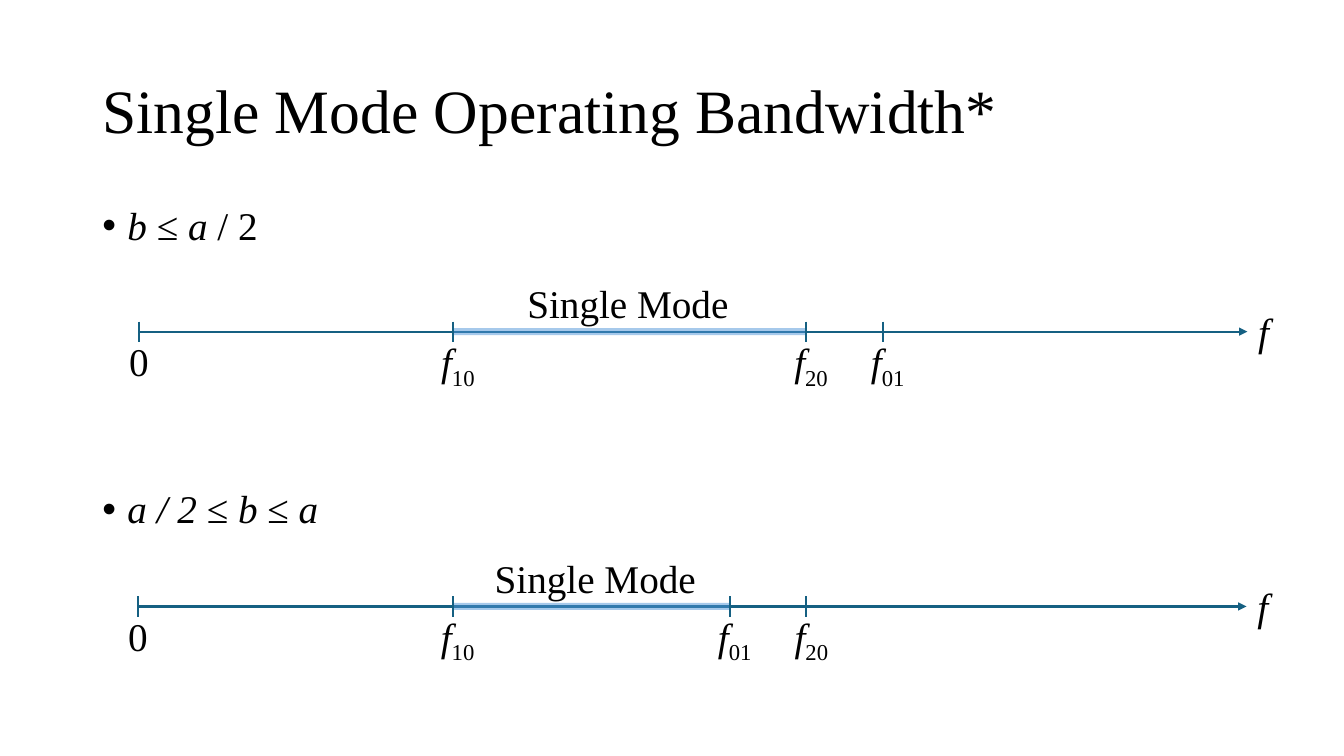
import pptx
import pptx.dml.color
import pptx.enum.shapes
import pptx.enum.text
import pptx.oxml.ns
import pptx.util
from lxml import etree

Pt = pptx.util.Pt
qn = pptx.oxml.ns.qn
FONT = "Times New Roman"
COLORS = {"ink": "000000", "axis": "156082", "band": "4E95D9"}


def color(name):
    return pptx.dml.color.RGBColor.from_string(COLORS[name])


def add_runs(paragraph, pieces, size):
    for words, italic, is_subscript in pieces:
        run = paragraph.add_run()
        run.text = words
        run.font.name = FONT
        run.font.size = Pt(size)
        run.font.italic = italic
        run.font.color.rgb = color("ink")
        if is_subscript:
            run.font._element.set("baseline", "-25000")


def add_text(slide, box, pieces, size=28, wrap=False):
    frame = slide.shapes.add_textbox(*map(Pt, box)).text_frame
    frame.word_wrap = wrap
    add_runs(frame.paragraphs[0], pieces, size)
    return frame


def add_line(slide, x1, y1, x2, y2, name="axis", width=1.5, alpha=None, arrow=False):
    line = slide.shapes.add_connector(
        pptx.enum.shapes.MSO_CONNECTOR.STRAIGHT, Pt(x1), Pt(y1), Pt(x2), Pt(y2))
    line.line.color.rgb = color(name)
    line.line.width = Pt(width)
    properties = line._element.spPr
    outline = properties.find(qn("a:ln"))
    if alpha:
        tint = outline.find(".//" + qn("a:srgbClr"))
        etree.SubElement(tint, qn("a:alpha"), val=str(alpha * 1000))
    if arrow:
        etree.SubElement(outline, qn("a:tailEnd"), type="triangle")
    etree.SubElement(properties, qn("a:effectLst"))


def add_title(slide, box):
    frame = add_text(slide, box, [("Single Mode Operating Bandwidth*", False, False)], 44, True)
    frame.vertical_anchor = pptx.enum.text.MSO_ANCHOR.MIDDLE
    frame.paragraphs[0].line_spacing = 0.9


def add_conditions(slide, box, conditions, gap):
    frame = slide.shapes.add_textbox(*map(Pt, box)).text_frame
    frame.word_wrap = True
    for index, pieces in enumerate(conditions):
        paragraph = frame.add_paragraph() if index else frame.paragraphs[0]
        paragraph.line_spacing = 0.9
        if index:
            paragraph.space_before = Pt(gap)
        layout = paragraph._p.get_or_add_pPr()
        layout.set("marL", str(Pt(18)))
        layout.set("indent", str(-Pt(18)))
        etree.SubElement(layout, qn("a:buFont"), typeface="Arial")
        etree.SubElement(layout, qn("a:buChar"), char="•")
        add_runs(paragraph, [(words, italic, False) for words, italic in pieces], 28)


def add_frequency_axis(slide, box, cutoffs, caption_shift=0):
    left, top, width, height = box
    axis_y = top + height / 2
    add_line(slide, left, axis_y, left + width, axis_y, arrow=True)
    add_text(slide, (left + width + 0.7, axis_y - 20.9, 22.5, height), [("f", True, False)])

    band_start, band_end = (left + offset for _, offset in cutoffs[:2])
    add_line(slide, band_start, axis_y, band_end, axis_y, "band", 5, alpha=50)
    caption_width = 160
    caption_left = (band_start + band_end - caption_width) / 2 + caption_shift
    add_text(slide, (caption_left, axis_y - 41, caption_width, 41),
             [("Single Mode", False, False)])

    add_text(slide, (left - 13.9, axis_y + 0.4, 29, 41), [("0", False, False)])
    for mode, offset in cutoffs:
        add_text(slide, (left + offset - 15.5, axis_y + 0.4, 41, 41),
                 [("f", True, False), (mode, False, True)])
    for offset in [0] + [offset for _, offset in cutoffs]:
        add_line(slide, left + offset, axis_y - 7.2, left + offset, axis_y + 7.2)


def main():
    deck = pptx.Presentation()
    deck.slide_width, deck.slide_height = Pt(960), Pt(540)
    slide = deck.slides.add_slide(deck.slide_layouts[6])
    add_title(slide, (66, 28.8, 828, 104.4))
    add_conditions(slide, (66, 144, 828, 342.7), [
        [("b ", True), ("≤ ", False), ("a", True), (" / 2", False)],
        [("a / 2 ", True), ("≤ ", False), ("b ", True), ("≤ ", False), ("a", True)],
    ], gap=172)
    add_frequency_axis(slide, (99, 216.4, 792, 41),
                       [("10", 224.5), ("20", 476.8), ("01", 531.5)])
    add_frequency_axis(slide, (98.4, 412.7, 792, 41),
                       [("10", 224.9), ("01", 422.9), ("20", 477.6)], caption_shift=4)
    deck.save("out.pptx")


if __name__ == "__main__":
    main()
